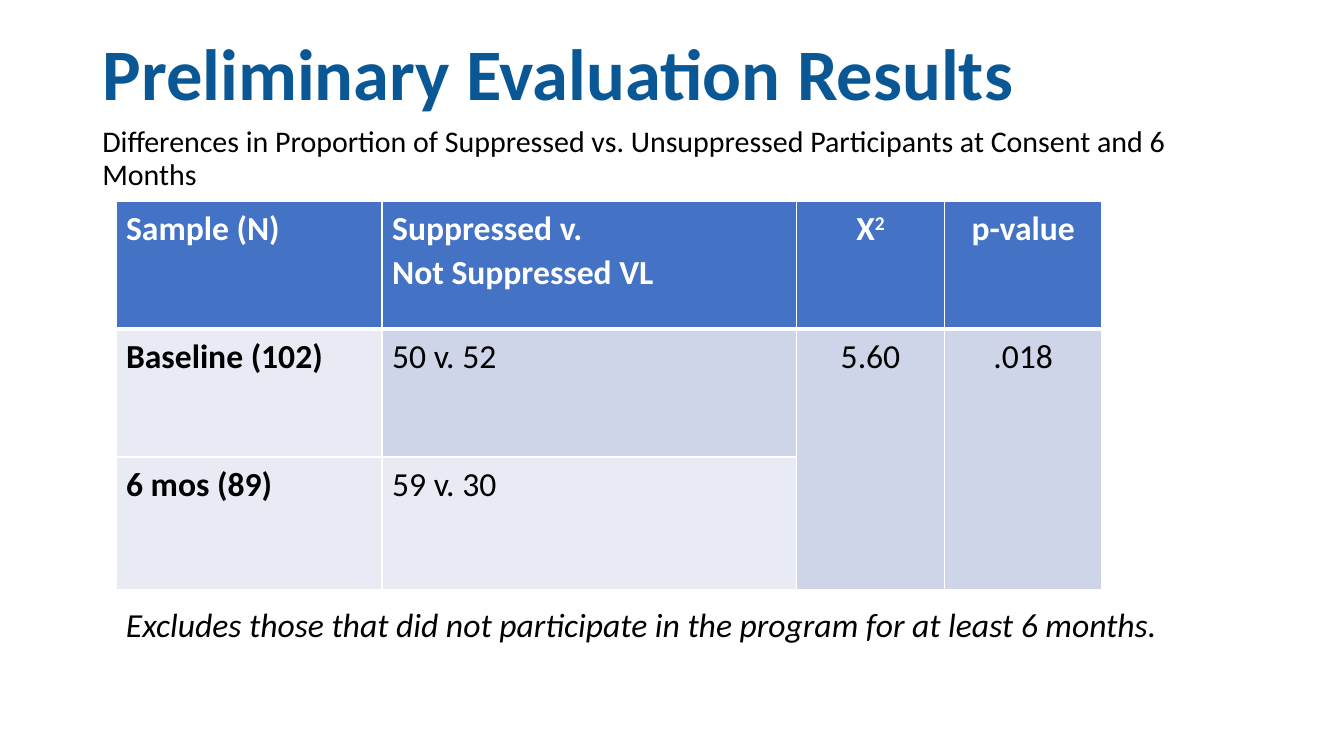
from dataclasses import dataclass

from lxml import etree
from pptx import Presentation, util as u
from pptx.dml.color import RGBColor
from pptx.enum import text
from pptx.oxml import ns


@dataclass(frozen=True)
class Theme:
    font: str = "Calibri"
    title_color: str = "095895"
    ink: str = "000000"
    paper: str = "FFFFFF"
    header: str = "4472C4"
    light_band: str = "E8EBF4"
    dark_band: str = "CFD5E9"
    title_size: float = 51.8
    subtitle_size: float = 21.4
    body_size: float = 24
    thin_line: float = 0.96
    thick_line: float = 3


class ResultsSlide:
    """Holds the theme and the slide; lengths are percentages of the slide's size."""

    def __init__(self, presentation, theme):
        self.theme = theme
        self.width, self.height = presentation.slide_width, presentation.slide_height
        self.slide = presentation.slides.add_slide(presentation.slide_layouts[5])

    def across(self, share):
        return u.Emu(round(self.width * share / 100))

    def down(self, share):
        return u.Emu(round(self.height * share / 100))

    def box(self, left, top, width, height):
        return self.across(left), self.down(top), self.across(width), self.down(height)

    def format(self, paragraph, size, color, spacing, bold=False, italic=False, centered=False):
        paragraph.alignment = text.PP_ALIGN.CENTER if centered else text.PP_ALIGN.LEFT
        paragraph.line_spacing = spacing
        for run in paragraph.runs:
            font = run.font
            font.name, font.size = self.theme.font, u.Pt(size)
            font.bold, font.italic = bold, italic
            font.color.rgb = RGBColor.from_string(color)

    def title(self, words, *place):
        shape = self.slide.shapes.title
        shape.left, shape.top, shape.width, shape.height = self.box(*place)
        frame = shape.text_frame
        frame.text = words
        frame.auto_size = text.MSO_AUTO_SIZE.NONE
        frame.vertical_anchor = text.MSO_ANCHOR.MIDDLE
        self.format(frame.paragraphs[0], self.theme.title_size, self.theme.title_color, 0.9, bold=True)

    def text_box(self, words, size, spacing, *place, italic=False):
        frame = self.slide.shapes.add_textbox(*self.box(*place)).text_frame
        frame.word_wrap = True
        frame.text = words
        self.format(frame.paragraphs[0], size, self.theme.ink, spacing, italic=italic)

    def borders(self, cell, row):
        """Draw white cell edges, thick between the header and the first data row."""
        thin, thick = self.theme.thin_line, self.theme.thick_line
        widths = {"lnL": thin, "lnR": thin,
                  "lnT": thick if row == 1 else thin,
                  "lnB": thick if row == 0 else thin}
        properties = cell._tc.get_or_add_tcPr()
        for edge, width in widths.items():
            line = etree.SubElement(properties, ns.qn(f"a:{edge}"), w=str(u.Pt(width)))
            fill = etree.SubElement(line, ns.qn("a:solidFill"))
            etree.SubElement(fill, ns.qn("a:srgbClr"), val=self.theme.paper)

    def cell(self, cell, words, row, column, fill):
        self.borders(cell, row)
        cell.fill.solid()
        cell.fill.fore_color.rgb = RGBColor.from_string(fill)
        cell.text_frame.text = words
        color = self.theme.paper if row == 0 else self.theme.ink
        self.format(cell.text_frame.paragraphs[0], self.theme.body_size, color, 1.07,
                    bold=row == 0 or column == 0, centered=column >= 2)

    def table(self, left, top, columns, rows, content, fills):
        place = self.box(left, top, sum(columns), sum(rows))
        table = self.slide.shapes.add_table(len(rows), len(columns), *place).table
        for column, share in zip(table.columns, columns):
            column.width = self.across(share)
        for row, share in zip(table.rows, rows):
            row.height = self.down(share)
        for row, (words_row, fill_row) in enumerate(zip(content, fills)):
            for column, (words, fill) in enumerate(zip(words_row, fill_row)):
                self.cell(table.cell(row, column), words, row, column, fill)
        return table

    def superscript(self, cell, words):
        paragraph = cell.text_frame.paragraphs[0]
        run = paragraph.add_run()
        run.text = words
        self.format(paragraph, self.theme.body_size, self.theme.paper, 1.07, bold=True, centered=True)
        run._r.get_or_add_rPr().set("baseline", "30000")


def main():
    presentation = Presentation()
    presentation.slide_width, presentation.slide_height = u.Inches(13.33), u.Inches(7.5)
    theme = Theme()
    results = ResultsSlide(presentation, theme)

    results.title("Preliminary Evaluation Results", 6.88, 4.13, 86.25, 12.13)
    results.text_box(
        "Differences in Proportion of Suppressed vs. Unsuppressed Participants at Consent and 6 Months",
        theme.subtitle_size, 0.9, 6.88, 16.13, 86.25, 63.47)

    content = [
        ["Sample (N)", "Suppressed v.\vNot Suppressed VL", "Χ", "p-value"],
        ["Baseline (102)", "50 v. 52", "5.60", ".018"],
        ["6 mos (89)", "59 v. 30", "", ""],
    ]
    light, dark = theme.light_band, theme.dark_band
    fills = [[theme.header] * 4, [light, dark, dark, dark], [light, light, dark, dark]]
    table = results.table(8.63, 26.6, [19.8, 30.83, 11.03, 11.7], [16.93, 16.93, 17.47], content, fills)
    results.superscript(table.cell(0, 2), "2")
    for column in (2, 3):
        table.cell(1, column).merge(table.cell(2, column))

    results.text_box("Excludes those that did not participate in the program for at least 6 months.",
                     theme.body_size, 1.07, 8.63, 78.8, 79.97, 14.67, italic=True)
    presentation.save("out.pptx")


if __name__ == "__main__":
    main()
